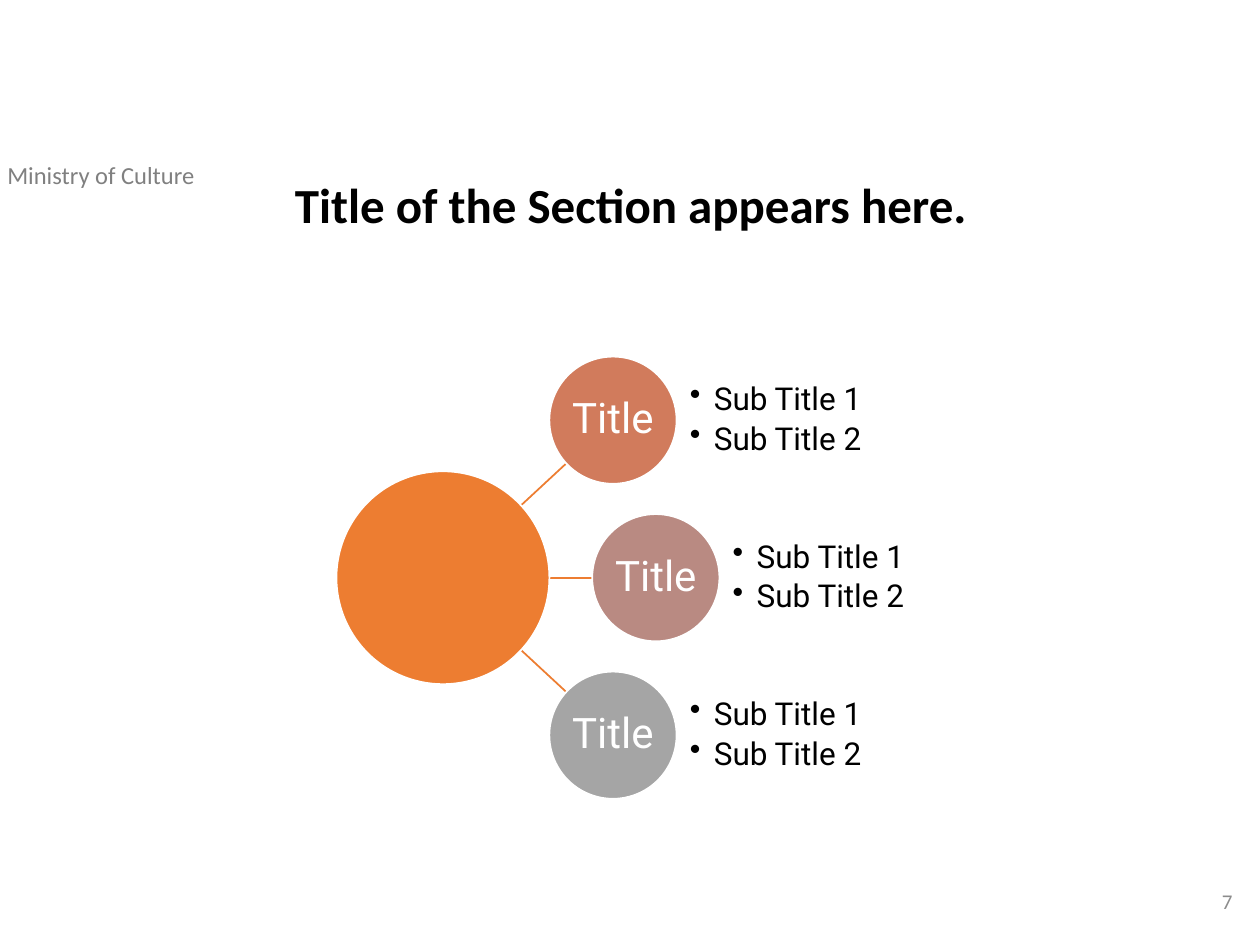
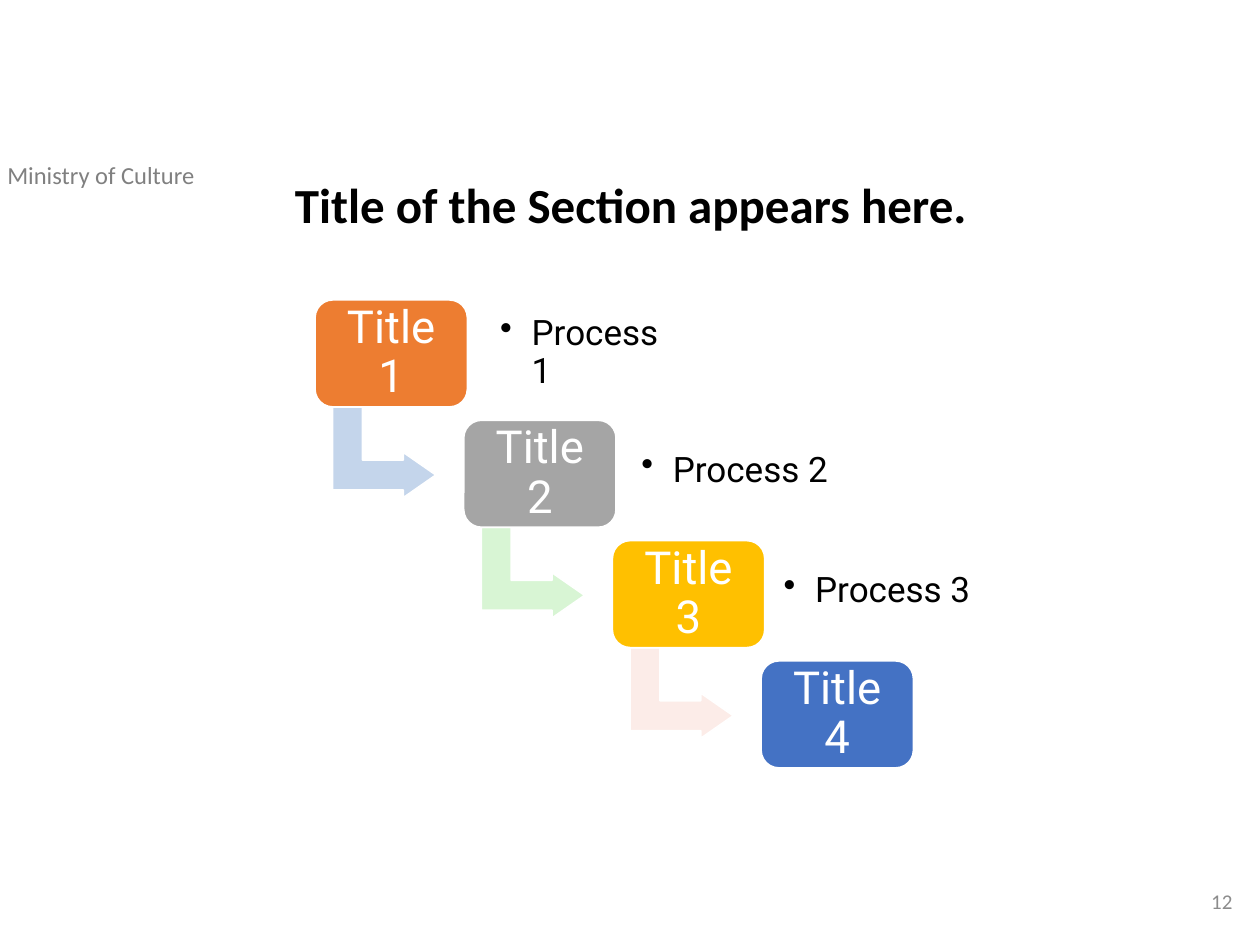
"""Build two section slides: a hub with three topics and a four-step staircase."""
from dataclasses import dataclass
from math import hypot

from lxml import etree
from pptx import Presentation
from pptx.dml.color import RGBColor
from pptx.enum.shapes import MSO_CONNECTOR, MSO_SHAPE
from pptx.enum.text import MSO_ANCHOR, MSO_AUTO_SIZE, PP_ALIGN
from pptx.oxml.ns import qn
from pptx.util import Inches, Pt

LEFT, CENTER, RIGHT = PP_ALIGN.LEFT, PP_ALIGN.CENTER, PP_ALIGN.RIGHT
TOP, MIDDLE = MSO_ANCHOR.TOP, MSO_ANCHOR.MIDDLE
ELLIPSE, ROUNDED = MSO_SHAPE.OVAL, MSO_SHAPE.ROUNDED_RECTANGLE
BENT_ARROW = MSO_SHAPE.BENT_UP_ARROW
STRAIGHT = MSO_CONNECTOR.STRAIGHT
FIT_TEXT = MSO_AUTO_SIZE.SHAPE_TO_FIT_TEXT
TITLE_ONLY = 5

SLIDE_WIDTH, SLIDE_HEIGHT = Inches(10), Inches(7.5)
CELL = SLIDE_WIDTH / 100

COLORS = {
    "black": "000000", "white": "FFFFFF", "ministry": "808080", "number": "8C8C8C",
    "orange": "ED7D31", "terracotta": "D17B5C", "rose": "B98A82", "gray": "A5A5A5",
    "gold": "FFC000", "blue": "4472C4",
    "pale blue": "C4D5EB", "pale green": "D8F5D4", "pale pink": "FCECE8",
}


@dataclass(frozen=True)
class Box:
    """A rectangle in columns and rows of a 100 by 75 grid."""
    left: float
    top: float
    width: float
    height: float

    def lengths(self) -> tuple[int, int, int, int]:
        """Return left, top, width and height as slide lengths."""
        return (cells(self.left), cells(self.top), cells(self.width), cells(self.height))


@dataclass(frozen=True)
class TextStyle:
    """How a block of text is set."""
    size: float
    color: str
    font: str = "Roboto"
    bold: bool = False
    align: PP_ALIGN = LEFT
    anchor: MSO_ANCHOR = MIDDLE
    line_spacing: float = 0.9
    gap: float = 0
    inset_x: float = 0
    inset_y: float = 0
    bullet_indent: float = 0


@dataclass(frozen=True)
class Topic:
    """A circle around the hub, by its centre, with its subtitles."""
    x: float
    y: float
    color: str


@dataclass(frozen=True)
class Step:
    """A stair of the process, its detail and the arrow to the next stair."""
    title: str
    color: str
    detail: str = ""
    detail_box: Box | None = None
    arrow_color: str = ""


TITLE_STYLE = TextStyle(28, "black", "Calibri", True, anchor=TOP, inset_x=1, inset_y=0.5)
MINISTRY_STYLE = TextStyle(14, "ministry", "Calibri", anchor=TOP, line_spacing=1,
                           inset_x=1, inset_y=0.5)
NUMBER_STYLE = TextStyle(12, "number", "Calibri", align=RIGHT, line_spacing=1,
                         inset_x=1, inset_y=0.5)
TOPIC_STYLE = TextStyle(24, "white", align=CENTER, inset_x=0.2, inset_y=0.2)
SUBTITLE_STYLE = TextStyle(18, "black", gap=3.2, bullet_indent=1.9)
STEP_STYLE = TextStyle(26, "white", align=CENTER, inset_x=1.1, inset_y=1.1)
DETAIL_STYLE = TextStyle(20, "black", inset_x=1.1, inset_y=1.1, bullet_indent=2.5)

SECTION_TITLE = "Title of the Section appears here."
TITLE_BOX = Box(22.4, 13.9, 64.6, 7.9)
MINISTRY_BOX = Box(-0.4, 12.2, 29, 3.4)
NUMBER_BOX = Box(76.3, 69.5, 22.5, 4)

HUB_X, HUB_Y, HUB_SIZE = 35.15, 45.85, 16.9
SPOKE_START = 5.85
TOPIC_SIZE = 10.1
TOPICS = [
    Topic(48.65, HUB_Y - 12.5, "terracotta"),
    Topic(52.05, HUB_Y, "rose"),
    Topic(48.65, HUB_Y + 12.5, "gray"),
]
SUBTITLES = ["Sub Title 1", "Sub Title 2"]

FIRST_STEP = Box(25, 23.8, 12.1, 8.5)
STEP_RIGHT, STEP_DOWN = 11.8, 9.55
ARROW_ADJUSTMENTS = [0.33, 0.25, 0.36]
STEPS = [
    Step("Title 1", "orange", "Process 1", Box(38.6, 24.6, 16, 6.9), "pale blue"),
    Step("Title 2", "gray", "Process 2", Box(49.8, 33.9, 23.5, 6.9), "pale green"),
    Step("Title 3", "gold", "Process 3", Box(61.1, 43.5, 19.7, 6.9), "pale pink"),
    Step("Title 4", "blue"),
]


def cells(count: float) -> int:
    """Return the length of a number of grid cells."""
    return round(count * CELL)


def rgb(name: str) -> RGBColor:
    """Look up a named colour."""
    return RGBColor.from_string(COLORS[name])


def write(shape, lines: list[str], style: TextStyle) -> None:
    """Fill a shape with one paragraph for each line."""
    frame = shape.text_frame
    frame.word_wrap = True
    frame.auto_size = MSO_AUTO_SIZE.NONE
    frame.vertical_anchor = style.anchor
    frame.margin_left = frame.margin_right = cells(style.inset_x)
    frame.margin_top = frame.margin_bottom = cells(style.inset_y)
    for index, line in enumerate(lines):
        paragraph = frame.add_paragraph() if index else frame.paragraphs[0]
        if style.bullet_indent:
            properties = paragraph._p.get_or_add_pPr()
            properties.set("marL", str(cells(style.bullet_indent)))
            properties.set("indent", str(-cells(style.bullet_indent)))
            etree.SubElement(properties, qn("a:buChar")).set("char", "•")
        paragraph.alignment = style.align
        paragraph.line_spacing = style.line_spacing
        paragraph.space_before = Pt(0)
        paragraph.space_after = Pt(style.gap if index < len(lines) - 1 else 0)
        run = paragraph.add_run()
        run.text = line
        run.font.name = style.font
        run.font.size = Pt(style.size)
        run.font.bold = style.bold
        run.font.color.rgb = rgb(style.color)


def add_text(slide, box: Box, lines: list[str], style: TextStyle):
    """Add a text box."""
    shape = slide.shapes.add_textbox(*box.lengths())
    write(shape, lines, style)
    return shape


def add_figure(slide, kind: MSO_SHAPE, box: Box, color: str):
    """Add a filled preset shape with a thin white outline."""
    shape = slide.shapes.add_shape(kind, *box.lengths())
    shape.shadow.inherit = False
    shape.fill.solid()
    shape.fill.fore_color.rgb = rgb(color)
    shape.line.color.rgb = rgb("white")
    shape.line.width = Pt(1)
    return shape


def add_circle(slide, x: float, y: float, size: float, color: str):
    """Add a circle around its centre."""
    return add_figure(slide, ELLIPSE, Box(x - size / 2, y - size / 2, size, size), color)


def add_spoke(slide, topic: Topic) -> None:
    """Draw the line from the hub to the near edge of a topic."""
    across, down = topic.x - HUB_X, topic.y - HUB_Y
    start = SPOKE_START / across
    end = 1 - TOPIC_SIZE / 2 / hypot(across, down)
    points = [cells(origin + share * reach) for share in (start, end)
              for origin, reach in ((HUB_X, across), (HUB_Y, down))]
    spoke = slide.shapes.add_connector(STRAIGHT, *points)
    spoke.line.color.rgb = rgb("orange")
    spoke.line.width = Pt(1)
    etree.SubElement(spoke._element.spPr, qn("a:effectLst"))


def add_section_slide(presentation, number: int):
    """Add a slide with the shared title, ministry name and slide number."""
    slide = presentation.slides.add_slide(presentation.slide_layouts[TITLE_ONLY])
    title = slide.shapes.title
    title.left, title.top, title.width, title.height = TITLE_BOX.lengths()
    write(title, [SECTION_TITLE], TITLE_STYLE)
    ministry = add_text(slide, MINISTRY_BOX, ["Ministry of Culture"], MINISTRY_STYLE)
    ministry.text_frame.auto_size = FIT_TEXT
    add_text(slide, NUMBER_BOX, [str(number)], NUMBER_STYLE)
    return slide


def build_hub_slide(presentation) -> None:
    """Draw the hub, its spokes and its topics."""
    slide = add_section_slide(presentation, 7)
    for topic in TOPICS:
        add_spoke(slide, topic)
    add_circle(slide, HUB_X, HUB_Y, HUB_SIZE, "orange")
    for topic in TOPICS:
        circle = add_circle(slide, topic.x, topic.y, TOPIC_SIZE, topic.color)
        write(circle, ["Title"], TOPIC_STYLE)
        subtitle_box = Box(topic.x + 6.1, topic.y - TOPIC_SIZE / 2, 15.2, TOPIC_SIZE)
        add_text(slide, subtitle_box, SUBTITLES, SUBTITLE_STYLE)


def build_process_slide(presentation) -> None:
    """Draw the staircase of steps."""
    slide = add_section_slide(presentation, 12)
    for index, step in enumerate(STEPS):
        left = FIRST_STEP.left + index * STEP_RIGHT
        top = FIRST_STEP.top + index * STEP_DOWN
        if step.arrow_color:
            arrow_box = Box(left + 1.9, top + 8, 7.2, 8.2)
            arrow = add_figure(slide, BENT_ARROW, arrow_box, step.arrow_color)
            arrow.rotation = 90
            for position, value in enumerate(ARROW_ADJUSTMENTS):
                arrow.adjustments[position] = value
        stair_box = Box(left, top, FIRST_STEP.width, FIRST_STEP.height)
        stair = add_figure(slide, ROUNDED, stair_box, step.color)
        write(stair, [step.title], STEP_STYLE)
        if step.detail_box:
            add_text(slide, step.detail_box, [step.detail], DETAIL_STYLE)


def main() -> None:
    """Build and save the presentation."""
    presentation = Presentation()
    presentation.slide_width, presentation.slide_height = SLIDE_WIDTH, SLIDE_HEIGHT
    build_hub_slide(presentation)
    build_process_slide(presentation)
    presentation.save("out.pptx")


if __name__ == "__main__":
    main()
